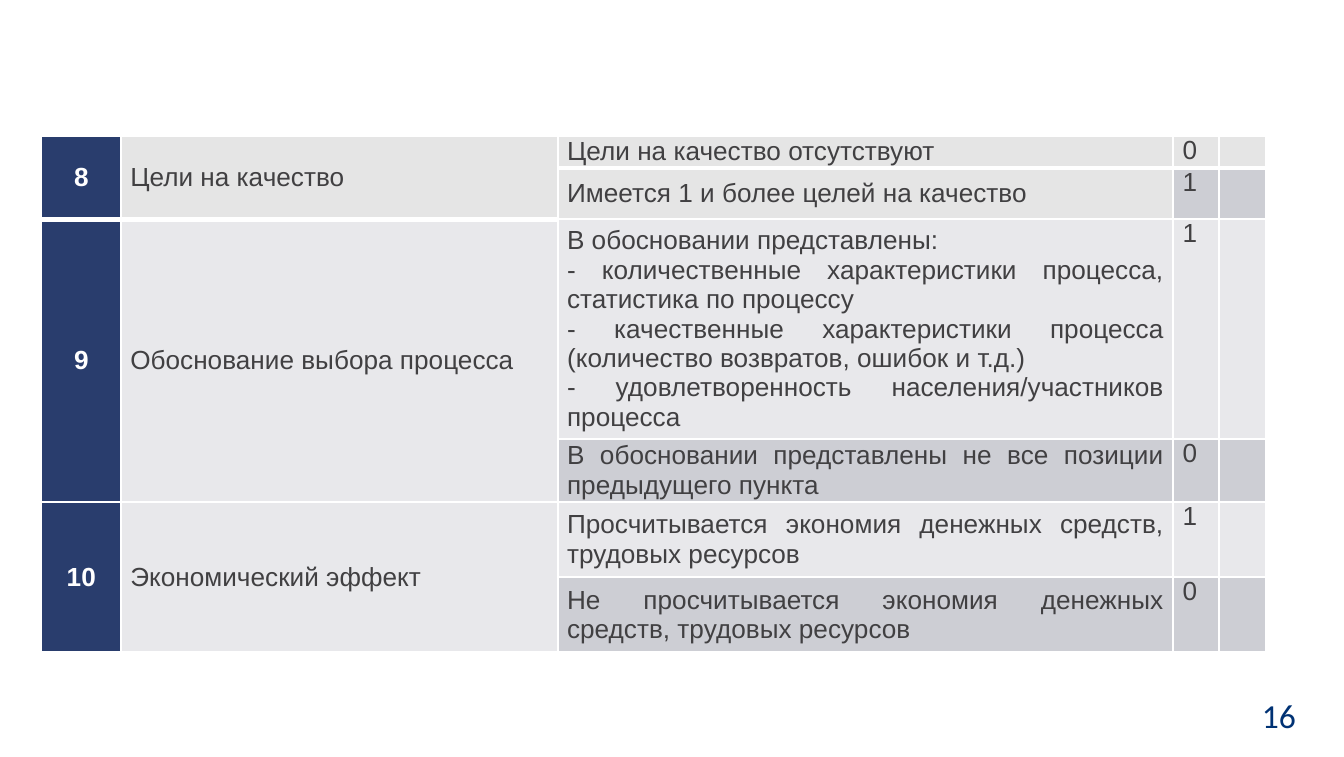
"""Build a slide with a table of scoring criteria and a page number."""
from dataclasses import dataclass

from lxml import etree
from pptx import Presentation
from pptx.dml.color import RGBColor
from pptx.enum import text as t
from pptx.oxml import ns
from pptx.util import Inches, Pt

NAVY, INK, WHITE = "293D6D", "414042", "FFFFFF"
GREY, PALE, DARK = "E5E5E5", "E8E8EB", "CDCED4"
COLS = [0.59, 3.25, 4.58, 0.34, 0.35]
ROWS = [0.24, 0.38, 1.5, 0.38, 0.56, 0.56]


@dataclass
class Level:
    text: str
    score: str
    fill: str
    side: str


@dataclass
class Group:
    num: str
    name: str
    fill: str
    levels: list[Level]


GROUPS = [
    Group("8", "Цели на качество", GREY, [
        Level("Цели на качество отсутствуют", "0", GREY, GREY),
        Level("Имеется 1 и более целей на качество", "1", GREY, DARK),
    ]),
    Group("9", "Обоснование выбора процесса", PALE, [
        Level("В обосновании представлены:\n"
              "- количественные характеристики процесса, статистика по процессу\n"
              "- качественные характеристики процесса (количество возвратов, ошибок и т.д.)\n"
              "- удовлетворенность населения/участников процесса", "1", PALE, PALE),
        Level("В обосновании представлены не все позиции предыдущего пункта",
              "0", DARK, DARK),
    ]),
    Group("10", "Экономический эффект", PALE, [
        Level("Просчитывается экономия денежных средств, трудовых ресурсов",
              "1", PALE, PALE),
        Level("Не просчитывается экономия денежных средств, трудовых ресурсов",
              "0", DARK, DARK),
    ]),
]


def paint(fmt, color: str) -> None:
    fmt.solid()
    fmt.fore_color.rgb = RGBColor.from_string(color)


def write(frame, text: str, *, size=14, font="Arial", color=INK, bold=False,
          align=t.PP_ALIGN.JUSTIFY) -> None:
    for i, line in enumerate(text.split("\n")):
        para = frame.paragraphs[0] if i == 0 else frame.add_paragraph()
        para.alignment = align
        if not line:
            end = etree.SubElement(para._p, ns.qn("a:endParaRPr"), sz=str(size * 100))
            etree.SubElement(end, ns.qn("a:latin"), typeface=font)
            continue
        run = para.add_run()
        run.text = line
        run.font.size, run.font.name, run.font.bold = Pt(size), font, bold
        paint(run.font.fill, color)


def edge(cell, side: str, width: float) -> None:
    line = etree.SubElement(cell._tc.get_or_add_tcPr(), ns.qn(f"a:ln{side}"),
                            w=str(Pt(width)))
    fill = etree.SubElement(line, ns.qn("a:solidFill"))
    etree.SubElement(fill, ns.qn("a:srgbClr"), val=WHITE)


def frame_cell(cell, row: int, col: int) -> None:
    heavy = 2 if col < 2 else 1
    widths = {"L": 1, "R": 1, "T": 3 if row == heavy else 1,
              "B": 3 if row == heavy - 1 else 1}
    for side, width in widths.items():
        edge(cell, side, width)


def fill_cell(cell, text: str, fill: str, *, middle=True, **style) -> None:
    cell.margin_left = cell.margin_right = Inches(0.07)
    cell.margin_top = cell.margin_bottom = 0
    cell.vertical_anchor = t.MSO_ANCHOR.MIDDLE if middle else t.MSO_ANCHOR.TOP
    paint(cell.fill, fill)
    write(cell.text_frame, text, **style)


def add_grid(slide) -> None:
    table = slide.shapes.add_table(
        len(ROWS), len(COLS), Inches(0.31), Inches(1.01),
        Inches(sum(COLS)), Inches(sum(ROWS))).table
    table.first_row = table.horz_banding = False
    for col, width in zip(table.columns, COLS):
        col.width = Inches(width)
    for row, height in zip(table.rows, ROWS):
        row.height = Inches(height)
    for r in range(len(ROWS)):
        for c in range(len(COLS)):
            frame_cell(table.cell(r, c), r, c)
    for g, group in enumerate(GROUPS):
        top = 2 * g
        for r, level in enumerate(group.levels, top):
            fill_cell(table.cell(r, 0), group.num if r == top else "", NAVY,
                      color=WHITE, bold=True, align=t.PP_ALIGN.CENTER)
            fill_cell(table.cell(r, 1), group.name if r == top else "", group.fill)
            fill_cell(table.cell(r, 2), level.text, level.fill)
            fill_cell(table.cell(r, 3), level.score, level.side, middle=False)
            fill_cell(table.cell(r, 4), "", level.side, middle=False)
        for c in range(2):
            table.cell(top, c).merge(table.cell(top + 1, c))


def add_page(slide, text: str) -> None:
    box = slide.shapes.add_textbox(Inches(9.29), Inches(5.12),
                                   Inches(0.69), Inches(0.41))
    box.text_frame.word_wrap = True
    write(box.text_frame, text, size=18, font="Calibri", color="003274",
          align=t.PP_ALIGN.LEFT)


def main() -> None:
    deck = Presentation()
    deck.slide_width, deck.slide_height = Inches(10), Inches(5.63)
    slide = deck.slides.add_slide(deck.slide_layouts[6])
    add_page(slide, "16")
    add_grid(slide)
    deck.save("out.pptx")


if __name__ == "__main__":
    main()
